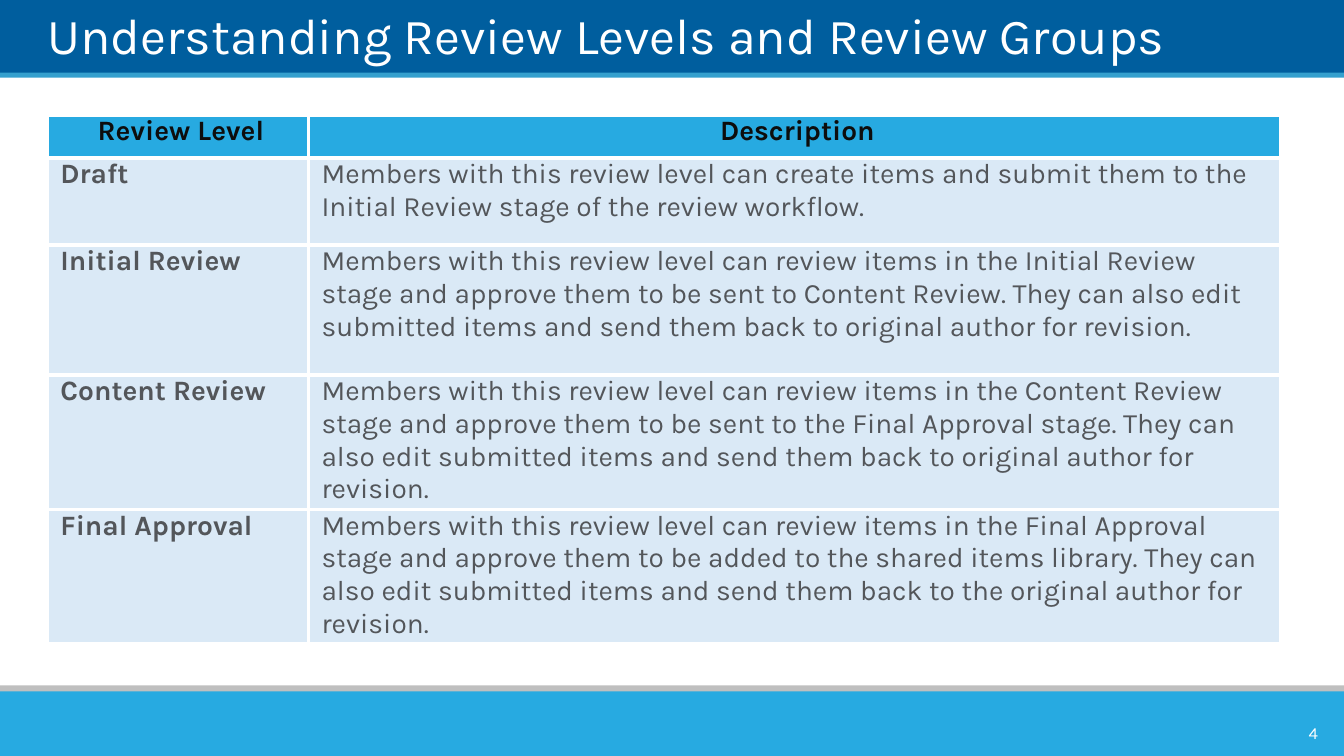
import pptx
import pptx.dml.color
import pptx.enum.shapes
import pptx.enum.text
import pptx.oxml.ns
import pptx.util
from lxml import etree

Inches = pptx.util.Inches
Pt = pptx.util.Pt
RGBColor = pptx.dml.color.RGBColor
ALIGN = pptx.enum.text.PP_ALIGN
ANCHOR = pptx.enum.text.MSO_ANCHOR

WHITE = RGBColor(0xFF, 0xFF, 0xFF)
NAVY = RGBColor(0x00, 0x5E, 0x9E)
BLUE = RGBColor(0x35, 0xA0, 0xCE)
SKY = RGBColor(0x27, 0xAA, 0xE1)
PALE = RGBColor(0xDA, 0xE9, 0xF6)
SILVER = RGBColor(0xBF, 0xBF, 0xBF)
BLACK = RGBColor(0x0D, 0x0D, 0x0D)
GRAY = RGBColor(0x53, 0x56, 0x5A)

WIDTH = 13.33
BANDS = [
    (-0.01, 0.75, NAVY),
    (0.72, 0.05, BLUE),
    (6.8, 0.14, SILVER),
    (6.86, 0.64, SKY),
]
COLS = [2.59, 9.64]
HEIGHTS = [0.43, 0.86, 1.29, 1.29, 1.29]
LEVELS = [
    ("Review Level", "Description"),
    ("Draft", "Members with this review level can create items and submit "
     "them to the Initial Review stage of the review workflow."),
    ("Initial Review", "Members with this review level can review items in "
     "the Initial Review stage and approve them to be sent to Content Review. "
     "They can also edit submitted items and send them back to original "
     "author for revision."),
    ("Content Review", "Members with this review level can review items in "
     "the Content Review stage and approve them to be sent to the Final "
     "Approval stage. They can also edit submitted items and send them back "
     "to original author for revision."),
    ("Final Approval", "Members with this review level can review items in "
     "the Final Approval stage and approve them to be added to the shared "
     "items library. They can also edit submitted items and send them back "
     "to the original author for revision."),
]


class Painter:
    face = "Karla"

    def __init__(self, slide):
        self.slide = slide

    def style(self, para, size, color, bold=False, align=ALIGN.LEFT):
        para.alignment = align
        font = para.font
        font.name, font.size, font.bold = self.face, Pt(size), bold
        font.color.rgb = color

    def band(self, top, height, color):
        kind = pptx.enum.shapes.MSO_SHAPE.RECTANGLE
        shape = self.slide.shapes.add_shape(
            kind, 0, Inches(top), Inches(WIDTH), Inches(height))
        shape.shadow.inherit = False
        shape.fill.solid()
        shape.fill.fore_color.rgb = color
        shape.line.fill.background()

    def text(self, words, place, size, anchor, inset, align=ALIGN.LEFT):
        box = self.slide.shapes.add_textbox(*map(Inches, place))
        frame = box.text_frame
        frame.word_wrap = True
        frame.vertical_anchor = anchor
        frame.margin_left = frame.margin_right = Inches(inset)
        frame.margin_top = frame.margin_bottom = Inches(inset / 2)
        frame.text = words
        self.style(frame.paragraphs[0], size, WHITE, align=align)

    def border(self, cell):
        props = cell._tc.get_or_add_tcPr()
        name = pptx.oxml.ns.qn
        for side in ("a:lnL", "a:lnR", "a:lnT", "a:lnB"):
            line = etree.SubElement(props, name(side), w=str(Pt(3)))
            fill = etree.SubElement(line, name("a:solidFill"))
            etree.SubElement(fill, name("a:srgbClr"), val=str(WHITE))

    def cell(self, cell, words, head, bold):
        self.border(cell)
        cell.fill.solid()
        cell.fill.fore_color.rgb = SKY if head else PALE
        cell.margin_left = cell.margin_right = Inches(0.07)
        cell.margin_top = cell.margin_bottom = 0
        cell.text = words
        para = cell.text_frame.paragraphs[0]
        para._p.get_or_add_pPr().set("marL", str(Inches(0.06)))
        para.space_after = Pt(4)
        self.style(para, 20, BLACK if head else GRAY, bold,
                   ALIGN.CENTER if head else ALIGN.LEFT)

    def table(self, left, top, rows):
        table = self.slide.shapes.add_table(
            len(rows), len(COLS), Inches(left), Inches(top),
            Inches(sum(COLS)), Inches(sum(HEIGHTS))).table
        for col, width in zip(table.columns, COLS):
            col.width = Inches(width)
        for r, (row, height) in enumerate(zip(rows, HEIGHTS)):
            table.rows[r].height = Inches(height)
            for c, words in enumerate(row):
                self.cell(table.cell(r, c), words, r == 0, r == 0 or c == 0)


def main():
    deck = pptx.Presentation()
    deck.slide_width, deck.slide_height = Inches(WIDTH), Inches(7.5)
    paint = Painter(deck.slides.add_slide(deck.slide_layouts[6]))
    for band in BANDS:
        paint.band(*band)
    paint.text("Understanding Review Levels and Review Groups",
               (0.47, 0.07, 12.43, 0.57), 36, ANCHOR.BOTTOM, 0)
    paint.table(0.47, 1.14, LEVELS)
    paint.text("4", (12.4, 7.12, 0.77, 0.3), 12, ANCHOR.MIDDLE, 0.1,
               ALIGN.RIGHT)
    deck.save("out.pptx")


if __name__ == "__main__":
    main()
